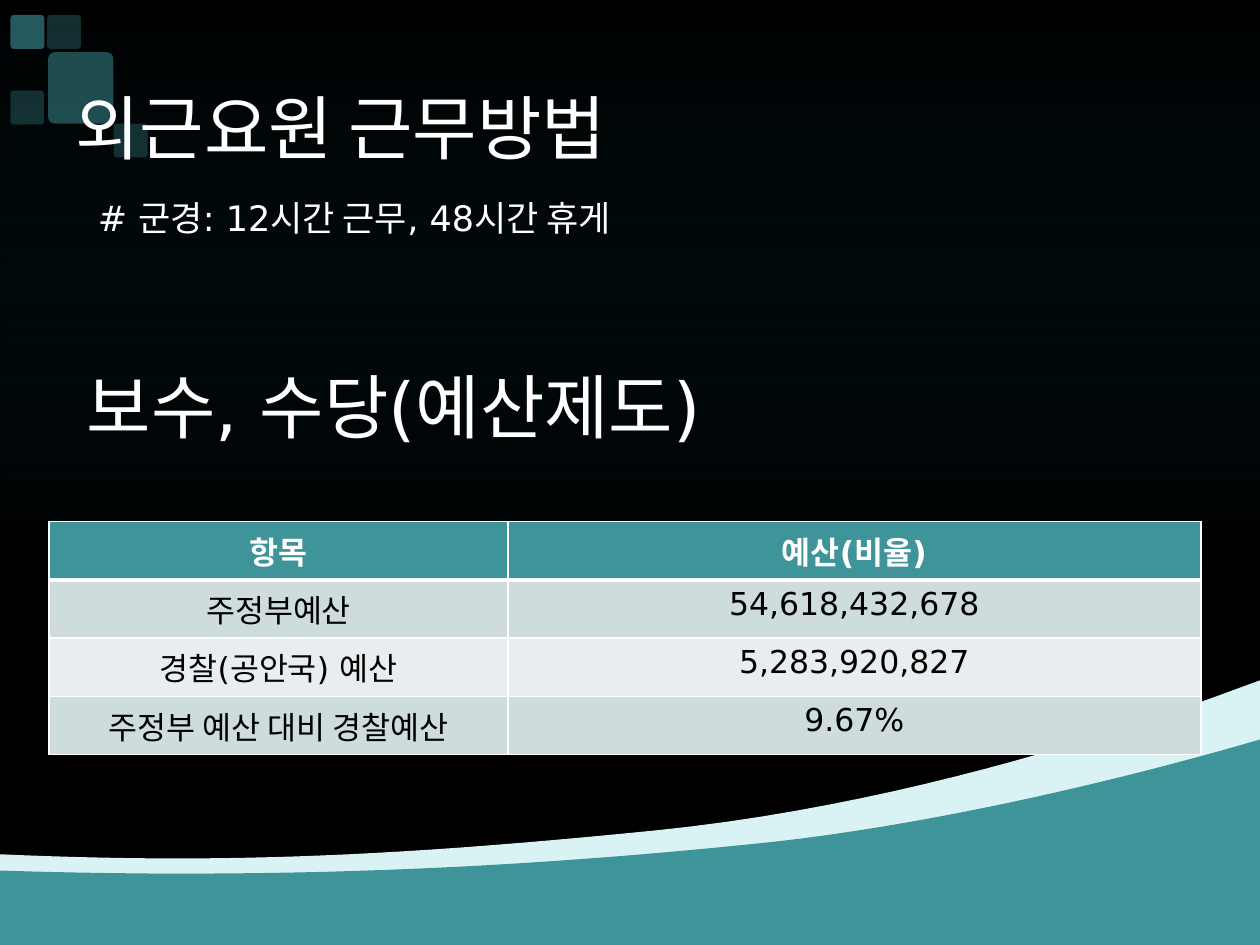
"""Builds a dark slide on field-duty shifts and the police budget."""
from dataclasses import dataclass

from lxml import etree
from pptx import Presentation
from pptx.dml.color import RGBColor
from pptx.enum import shapes, text
from pptx.oxml import ns
from pptx.util import Pt


@dataclass(frozen=True)
class Theme:
    font: str = "DejaVu Sans"
    night: str = "000000"
    glow: str = "005466"
    teal: str = "3F949A"
    foam: str = "D9F3F4"
    light: str = "FFFFFF"
    bands: tuple = ("CFDCDE", "E8EEEF")
    heading: int = 40
    detail: int = 20
    cell: int = 18


def rgb(code):
    return RGBColor.from_string(code)


def child(parent, tag, **attributes):
    return etree.SubElement(parent, ns.qn(tag), attributes)


def bezier(start, first, second, end, steps=24):
    for step in range(1, steps + 1):
        t = step / steps
        weights = ((1 - t) ** 3, 3 * t * (1 - t) ** 2, 3 * t * t * (1 - t), t ** 3)
        yield tuple(
            sum(w * point[axis] for w, point in zip(weights, (start, first, second, end)))
            for axis in (0, 1)
        )


class DutySlide:
    def __init__(self, deck, theme):
        self.theme = theme
        self.width, self.height = deck.slide_width.pt, deck.slide_height.pt
        self.slide = deck.slides.add_slide(deck.slide_layouts[1])
        title = self.slide.shapes.title._element
        title.getparent().remove(title)
        backdrop = self.slide.background.fill
        backdrop.solid()
        backdrop.fore_color.rgb = rgb(theme.night)

    def paint(self, shape, color, opacity=100):
        shape.shadow.inherit = False
        shape.line.fill.background()
        shape.fill.solid()
        shape.fill.fore_color.rgb = rgb(color)
        if opacity < 100:
            tint = shape._element.spPr.find(ns.qn("a:solidFill")).find(ns.qn("a:srgbClr"))
            child(tint, "a:alpha", val=str(opacity * 1000))

    def glow(self):
        veil = self.slide.shapes.add_shape(
            shapes.MSO_SHAPE.RECTANGLE, 0, 0, Pt(self.width), Pt(self.height))
        veil.shadow.inherit = False
        veil.line.fill.background()
        veil.fill.gradient()
        veil.fill.gradient_angle = 270
        settings = ((0, self.theme.glow, 0), (0.61, self.theme.night, 40))
        for stop, (position, color, opacity) in zip(veil.fill.gradient_stops, settings):
            stop.position = position
            stop.color.rgb = rgb(color)
            child(stop._gs.find(ns.qn("a:srgbClr")), "a:alpha", val=str(opacity * 1000))

    def wave(self, color, crest):
        outline = [point for i in range(0, len(crest) - 1, 3)
                   for point in bezier(*crest[i:i + 4])]
        outline += [(self.width, self.height), (0, self.height)]
        builder = self.slide.shapes.build_freeform(Pt(crest[0][0]), Pt(crest[0][1]))
        builder.add_line_segments([(Pt(x), Pt(y)) for x, y in outline], close=True)
        self.paint(builder.convert_to_shape(), color)

    def tile(self, left, top, width, height, opacity):
        square = self.slide.shapes.add_shape(
            shapes.MSO_SHAPE.ROUNDED_RECTANGLE, Pt(left), Pt(top), Pt(width), Pt(height))
        square.adjustments[0] = 0.1
        self.paint(square, self.theme.teal, opacity)

    def add_words(self, paragraph, words, size, color, bold=False):
        run = paragraph.add_run()
        run.text = words
        run.font.name, run.font.size, run.font.bold = self.theme.font, Pt(size), bold
        run.font.color.rgb = rgb(color)

    def body(self, left, top, width, height, lines):
        duties = self.slide.placeholders[1]
        self.slide.shapes._spTree.append(duties._element)
        duties.left, duties.top = Pt(left), Pt(top)
        duties.width, duties.height = Pt(width), Pt(height)
        frame = duties.text_frame
        frame.word_wrap = True
        frame.auto_size = text.MSO_AUTO_SIZE.NONE
        for index, (words, size, indent, gap) in enumerate(lines):
            paragraph = frame.add_paragraph() if index else frame.paragraphs[0]
            paragraph.line_spacing = 1.5
            paragraph.space_before = Pt(gap)
            properties = paragraph._p.get_or_add_pPr()
            properties.set("marL", str(Pt(indent)))
            properties.set("indent", "0")
            child(properties, "a:buNone")
            self.add_words(paragraph, words, size, self.theme.light)

    def border(self, cell, **widths):
        properties = cell._tc.get_or_add_tcPr()
        for side in "LRTB":
            line = child(properties, f"a:ln{side}", w=str(Pt(widths.get(side, 1))))
            child(child(line, "a:solidFill"), "a:srgbClr", val=self.theme.light)

    def table(self, left, top, columns, row_height, rows):
        budget = self.slide.shapes.add_table(
            len(rows), len(columns), Pt(left), Pt(top),
            Pt(sum(columns)), Pt(row_height * len(rows))).table
        for column, width in zip(budget.columns, columns):
            column.width = Pt(width)
        for r, row in enumerate(rows):
            budget.rows[r].height = Pt(row_height)
            header = r == 0
            fill = self.theme.teal if header else self.theme.bands[(r - 1) % 2]
            ink = self.theme.light if header else self.theme.night
            for c, words in enumerate(row):
                cell = budget.cell(r, c)
                self.border(cell, T=3 if r == 1 else 1, B=3 if header else 1)
                cell.fill.solid()
                cell.fill.fore_color.rgb = rgb(fill)
                paragraph = cell.text_frame.paragraphs[0]
                paragraph.alignment = text.PP_ALIGN.CENTER
                self.add_words(paragraph, words, self.theme.cell, ink, header)


def main():
    deck = Presentation()
    deck.slide_width, deck.slide_height = Pt(720), Pt(540)
    theme = Theme()
    page = DutySlide(deck, theme)
    page.glow()
    page.wave(theme.foam, [(0, 488.2), (115.9, 493.2), (211, 491), (375.1, 474.5),
                           (538.6, 457.9), (682.6, 402.5), (720, 388.8)])
    page.wave(theme.teal, [(0, 497.5), (177.1, 503.3), (320.4, 493.9), (442.8, 481),
                           (564.5, 467.3), (690.5, 431.3), (720, 422.6)])
    for left, top, opacity in ((26.9, 8.6, 30), (5.9, 51.8, 30),
                               (6, 8.6, 60), (65, 70.6, 30)):
        page.tile(left, top, 19.4, 19.4, opacity)
    page.tile(27.5, 29.8, 37.3, 40.8, 50)
    page.body(36, 20.9, 648, 496.8, [
        ("외근요원 근무방법", theme.heading, 0, 8),
        ("# 군경: 12시간 근무, 48시간 휴게", theme.detail, 12.7, 4),
        ("보수, 수당(예산제도)", theme.heading, 6.4, 47),
    ])
    page.table(28.1, 298.1, (262.1, 396), 29.2, [
        ("항목", "예산(비율)"),
        ("주정부예산", "54,618,432,678"),
        ("경찰(공안국) 예산", "5,283,920,827"),
        ("주정부 예산 대비 경찰예산", "9.67%"),
    ])
    deck.save("out.pptx")


if __name__ == "__main__":
    main()
